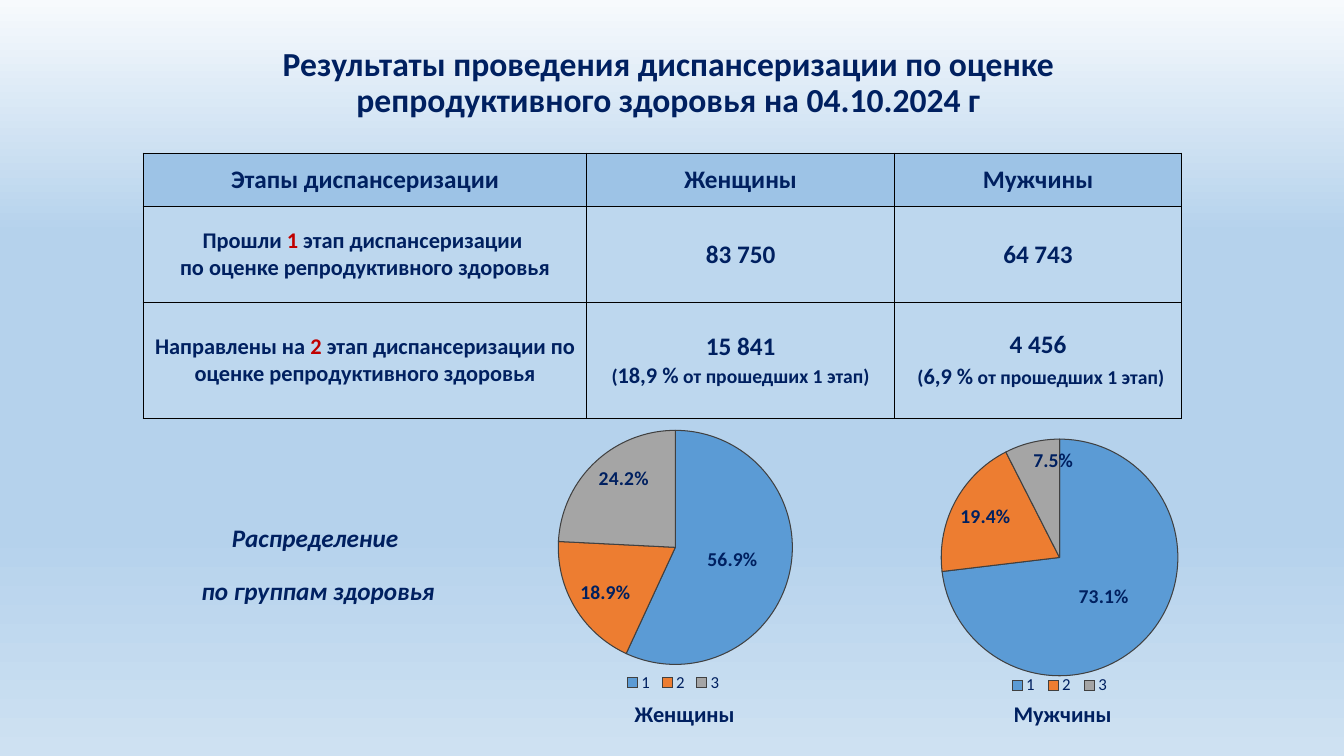
from dataclasses import dataclass

import pptx
import pptx.chart.data
import pptx.dml.color
import pptx.enum.chart
import pptx.enum.text
import pptx.oxml
import pptx.oxml.ns
import pptx.util
from lxml import etree

Cm, Pt = pptx.util.Cm, pptx.util.Pt
RGB = pptx.dml.color.RGBColor
qn = pptx.oxml.ns.qn
ALIGN = pptx.enum.text.PP_ALIGN
ANCHOR = pptx.enum.text.MSO_ANCHOR
LABEL = pptx.enum.chart.XL_LABEL_POSITION

FONT = "Calibri"
NAVY = RGB(0x00, 0x20, 0x60)
RED = RGB(0xC0, 0x00, 0x00)
BLACK = RGB(0x00, 0x00, 0x00)
HEADER_FILL = RGB(0x9D, 0xC3, 0xE6)
BODY_FILL = RGB(0xBD, 0xD7, 0xEE)
OUTLINE = RGB(0x40, 0x40, 0x40)
GROUP_COLORS = [RGB(0x5B, 0x9B, 0xD5), RGB(0xED, 0x7D, 0x31), RGB(0xA5, 0xA5, 0xA5)]
BACKGROUND = [(0, RGB(0xF7, 0xFA, 0xFD)), (31, RGB(0xB5, 0xD2, 0xEC)),
              (70, RGB(0xB5, 0xD2, 0xEC)), (100, RGB(0xCE, 0xE1, 0xF2))]


@dataclass
class Run:
    text: str
    size: float
    color: RGB = NAVY
    bold: bool = True
    italic: bool = False


@dataclass
class Pie:
    caption: str
    box: tuple  # left, top, width, height in cm
    plot: tuple  # fractions of the chart
    legend: tuple  # fractions of the chart
    values: tuple
    caption_box: tuple


def style(font, size: float, color: RGB = NAVY, bold: bool = True, italic: bool = False) -> None:
    font.name, font.size, font.bold, font.italic = FONT, Pt(size), bold, italic
    font.color.rgb = color


def write(tf, paragraphs: list[list[Run]], spacing: float = 1.0, gap: float = 0) -> None:
    """Fill a text frame with centred paragraphs; a newline becomes a line break."""
    for i, runs in enumerate(paragraphs):
        p = tf.paragraphs[0] if i == 0 else tf.add_paragraph()
        p.alignment, p.line_spacing = ALIGN.CENTER, spacing
        p.space_before = Pt(gap if i else 0)
        for run in runs:
            for j, part in enumerate(run.text.split("\n")):
                if j:
                    p.add_line_break()
                r = p.add_run()
                r.text = part
                style(r.font, run.size, run.color, run.bold, run.italic)


def add_text(s, box: tuple, paragraphs: list[list[Run]], wrap: bool,
             spacing: float = 1.0, gap: float = 0):
    sp = s.shapes.add_textbox(*map(Cm, box))
    tf = sp.text_frame
    tf.word_wrap = wrap
    tf.vertical_anchor = ANCHOR.MIDDLE if wrap else ANCHOR.TOP
    write(tf, paragraphs, spacing, gap)


def add_borders(cell) -> None:
    tcPr = cell._tc.get_or_add_tcPr()
    for side in ("a:lnL", "a:lnR", "a:lnT", "a:lnB"):
        ln = etree.SubElement(tcPr, qn(side), w=str(Pt(1)))
        fill = etree.SubElement(ln, qn("a:solidFill"))
        etree.SubElement(fill, qn("a:srgbClr"), val=str(BLACK))


def place(parent, index: int, fractions: tuple, inner: bool) -> None:
    """Give a chart part a manual layout."""
    for old in parent.findall(qn("c:layout")):
        parent.remove(old)
    layout = parent.makeelement(qn("c:layout"))
    parent.insert(index, layout)
    manual = etree.SubElement(layout, qn("c:manualLayout"))
    if inner:
        etree.SubElement(manual, qn("c:layoutTarget"), val="inner")
    for tag in ("c:xMode", "c:yMode"):
        etree.SubElement(manual, qn(tag), val="edge")
    for tag, value in zip(("c:x", "c:y", "c:w", "c:h"), fractions):
        etree.SubElement(manual, qn(tag), val=str(value))


def add_pie(s, pie: Pie) -> None:
    data = pptx.chart.data.CategoryChartData(number_format="0.0%")
    data.categories = ["1", "2", "3"]
    data.add_series("Группы здоровья", pie.values)
    chart = s.shapes.add_chart(pptx.enum.chart.XL_CHART_TYPE.PIE, *map(Cm, pie.box), data).chart
    chart.has_title = False
    style(chart.font, 10, BLACK, bold=False)
    chart.has_legend = True
    chart.legend.position = pptx.enum.chart.XL_LEGEND_POSITION.BOTTOM
    chart.legend.include_in_layout = False
    style(chart.legend.font, 12, bold=False)

    # Slices and their labels
    plot = chart.plots[0]
    plot.vary_by_categories = True
    plot.has_data_labels = True
    labels = plot.data_labels
    labels.show_value, labels.show_percentage = True, False
    labels.number_format, labels.number_format_is_linked = "0.0%", False
    style(labels.font, 14)
    for i, color in enumerate(GROUP_COLORS):
        point = plot.series[0].points[i]
        point.format.fill.solid()
        point.format.fill.fore_color.rgb = color
        point.format.line.color.rgb = OUTLINE
        point.format.line.width = Pt(0.75)
        style(point.data_label.font, 14)
        point.data_label.position = LABEL.INSIDE_END if i else LABEL.CENTER

    # Layout and a clear chart background
    root = chart.element.find(qn("c:chart"))
    place(root.find(qn("c:plotArea")), 0, pie.plot, inner=True)
    place(root.find(qn("c:legend")), 1, pie.legend, inner=False)
    spPr = root.makeelement(qn("c:spPr"))
    root.addnext(spPr)
    etree.SubElement(spPr, qn("a:noFill"))
    etree.SubElement(etree.SubElement(spPr, qn("a:ln")), qn("a:noFill"))

    add_text(s, pie.caption_box, [[Run(pie.caption, 16)]], wrap=False)


prs = pptx.Presentation()
prs.slide_width, prs.slide_height = Cm(33.87), Cm(19.05)
s = prs.slides.add_slide(prs.slide_layouts[5])

# Background gradient
bg = s.background.fill
bg.gradient()
bg.gradient_angle = 270
stops = s.element.find(".//" + qn("a:gsLst"))
for stop in list(stops):
    stops.remove(stop)
for percent, color in BACKGROUND:
    stop = etree.SubElement(stops, qn("a:gs"), pos=str(percent * 1000))
    etree.SubElement(stop, qn("a:srgbClr"), val=str(color))

# Title
title = s.shapes.title
title.left, title.top, title.width, title.height = map(Cm, (0.61, 0.69, 32.66, 2.82))
title.text_frame.vertical_anchor = ANCHOR.MIDDLE
write(title.text_frame, [[Run("Результаты проведения диспансеризации по оценке \n"
                              "репродуктивного здоровья на 04.10.2024 г ", 24)]], 0.9)

# Table of stages
COLS, ROWS = (11.18, 7.75, 7.24), (1.35, 2.41, 2.92)
CELLS = [
    [[[Run(head, 18)]] for head in ("Этапы диспансеризации", "Женщины", "Мужчины")],
    [[[Run("Прошли ", 16), Run("1", 16, RED), Run(" этап диспансеризации ", 16)],
      [Run("по оценке репродуктивного здоровья", 16)]],
     [[Run("83 750", 18)]],
     [[Run("64 743", 18)]]],
    [[[Run("Направлены на ", 16), Run("2", 16, RED),
       Run(" этап диспансеризации по оценке репродуктивного здоровья", 16)]],
     [[Run("15 841", 18)],
      [Run("(", 14), Run("18,9 %", 16), Run(" от прошедших 1 этап)", 14)]],
     [[Run("4 456", 18)],
      [Run(" ", 18, bold=False), Run("(", 14), Run("6,9 %", 16),
       Run(" от прошедших 1 этап)", 14)]]],
]
table = s.shapes.add_table(len(ROWS), len(COLS), Cm(3.61), Cm(3.86),
                           Cm(sum(COLS)), Cm(sum(ROWS))).table
for col, width in zip(table.columns, COLS):
    col.width = Cm(width)
for i, (row, height) in enumerate(zip(table.rows, ROWS)):
    row.height = Cm(height)
    for cell, paragraphs in zip(row.cells, CELLS[i]):
        cell.vertical_anchor = ANCHOR.MIDDLE
        add_borders(cell)
        cell.fill.solid()
        cell.fill.fore_color.rgb = BODY_FILL if i else HEADER_FILL
        write(cell.text_frame, paragraphs)

# Health groups: heading and pies
add_text(s, (4.27, 12.37, 7.49, 3.78),
         [[Run("Распределение ", 18, italic=True)],
          [Run("по группам здоровья", 18, italic=True)]], wrap=True, spacing=0.9, gap=19)
for pie in (
    Pie("Женщины", (12.6, 9.35, 10.16, 8.31), (0.13, 0.18, 0.61, 0.71),
        (0.3, 0.91, 0.26, 0.07), (0.569, 0.189, 0.242), (15.72, 17.53, 3.07, 0.94)),
    Pie("Мужчины", (21.95, 10.03, 9.32, 8.46), (0.19, 0.12, 0.64, 0.71),
        (0.36, 0.82, 0.3, 0.07), (0.731, 0.194, 0.075), (25.27, 17.53, 3.02, 0.94)),
):
    add_pie(s, pie)

prs.save("out.pptx")
